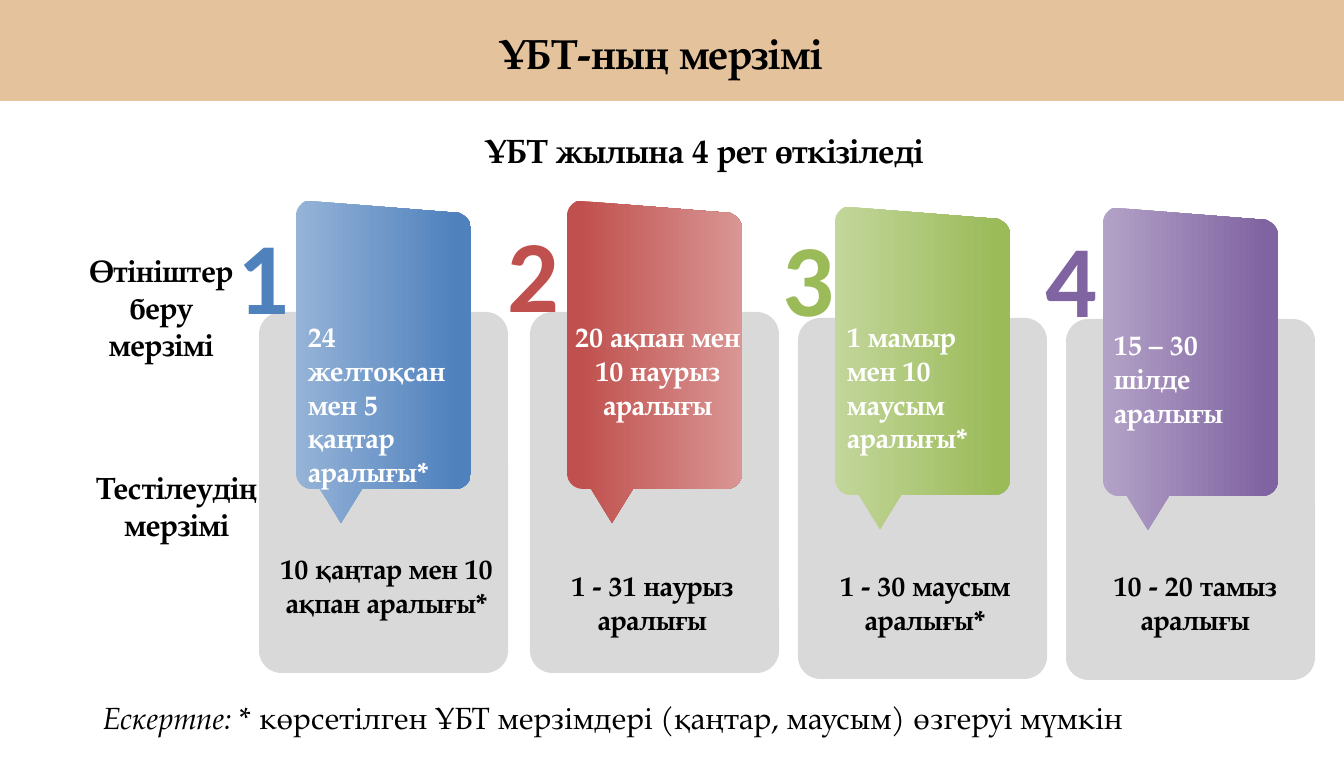
from pptx import Presentation
from pptx.dml.color import RGBColor
from pptx.enum.shapes import MSO_SHAPE
from pptx.enum.text import MSO_ANCHOR, MSO_AUTO_SIZE, PP_ALIGN
from pptx.util import Emu, Pt

SCALE = 914400 / 100.7
SERIF = "TeX Gyre Pagella"
SANS = "Calibri"
BLACK, WHITE, CARD_GREY, SAND = "000000", "FFFFFF", "D9D9D9", "E4C29C"
LEFT, CENTER, JUSTIFY = PP_ALIGN.LEFT, PP_ALIGN.CENTER, PP_ALIGN.JUSTIFY
TOP = MSO_ANCHOR.TOP
FIT_SHAPE = MSO_AUTO_SIZE.SHAPE_TO_FIT_TEXT
FIXED_SIZE = MSO_AUTO_SIZE.NONE
RECT, ROUND_RECT = MSO_SHAPE.RECTANGLE, MSO_SHAPE.ROUNDED_RECTANGLE
TITLE_ONLY = 5

CARD_W, CARD_H = 249, 361
CALLOUT_DX, CALLOUT_DY = 37, -111

PERIODS = [
    dict(card=(259, 312), number=("1", 228, 207),
         stops=[(0, "95B3D7"), (0.93, "4F81BD")], accent="4F81BD",
         apply=("24 желтоқсан мен 5 қаңтар аралығы*", (298, 315, 175, 179), LEFT),
         test=("10 қаңтар мен 10 ақпан аралығы*", (265, 547, 243, 112))),
    dict(card=(530, 312), number=("2", 498, 205),
         stops=[(0.07, "C0504D"), (1, "D99694")], accent="C0504D",
         apply=("20 ақпан мен 10 наурыз аралығы", (560, 315, 195, 146), CENTER),
         test=("1 - 31 наурыз аралығы", (532, 564, 240, 79))),
    dict(card=(798, 318), number=("3", 773, 209),
         stops=[(0, "C3D69B"), (0.93, "9BBB59")], accent="9BBB59",
         apply=("1 мамыр мен 10 маусым аралығы*", (837, 315, 175, 146), LEFT),
         test=("1 - 30 маусым аралығы*", (806, 564, 238, 79))),
    dict(card=(1066, 319), number=("4", 1036, 210),
         stops=[(0, "B3A2C7"), (0.93, "8064A2")], accent="8064A2",
         apply=("15 – 30 шілде аралығы", (1104, 323, 175, 112), LEFT),
         test=("10 - 20 тамыз аралығы", (1066, 564, 258, 79))),
]


def px(length):
    """Turn pixels into EMU."""
    return Emu(round(length * SCALE))


def color(hex_value):
    """Turn a hex string into a colour."""
    return RGBColor.from_string(hex_value)


def add_run(paragraph, text, size, font=SERIF, ink=BLACK, bold=False, italic=False):
    """Append one formatted run."""
    run = paragraph.add_run()
    run.text = text
    run.font.size = Pt(size)
    run.font.name = font
    run.font.bold = bold
    run.font.italic = italic
    run.font.color.rgb = color(ink)


def add_text(slide, text, box, size, align=CENTER, wrap=True, **run_format):
    """Add a text box and return its paragraph."""
    frame = slide.shapes.add_textbox(*map(px, box)).text_frame
    frame.word_wrap = wrap
    frame.auto_size = FIT_SHAPE
    paragraph = frame.paragraphs[0]
    paragraph.alignment = align
    add_run(paragraph, text, size, **run_format)
    return paragraph


def add_panel(slide, kind, box, fill):
    """Add a plain filled shape without outline."""
    panel = slide.shapes.add_shape(kind, *map(px, box))
    panel.shadow.inherit = False
    panel.fill.solid()
    panel.fill.fore_color.rgb = color(fill)
    panel.line.fill.background()
    return panel


def corner(p0, p1, p2, p3, steps=8):
    """Sample points along a cubic curve."""
    points = []
    for step in range(steps + 1):
        t = step / steps
        weights = ((1 - t) ** 3, 3 * t * (1 - t) ** 2, 3 * t * t * (1 - t), t ** 3)
        points.append(tuple(sum(w * p[axis] for w, p in zip(weights, (p0, p1, p2, p3)))
                            for axis in (0, 1)))
    return points


def add_callout(slide, left, top, stops):
    """Draw a slanted speech callout with a horizontal gradient."""
    outline = [(13, 0), (163, 12)]
    outline += corner((165, 13), (171, 16), (175, 21), (175, 28))
    outline += corner((175, 272), (175, 281), (168, 288), (159, 288))
    outline += [(66, 288), (45, 322), (24, 288)]
    outline += corner((16, 288), (7, 288), (0, 281), (0, 272))
    outline += corner((0, 15), (0, 8), (4, 3), (10, 0))
    points = [(px(x), px(y)) for x, y in outline]
    builder = slide.shapes.build_freeform(*points[0])
    builder.add_line_segments(points[1:], close=True)
    callout = builder.convert_to_shape(px(left), px(top))
    callout.shadow.inherit = False
    callout.line.fill.background()
    callout.fill.gradient()
    callout.fill.gradient_angle = 0
    for stop, (position, shade) in zip(callout.fill.gradient_stops, stops):
        stop.position = position
        stop.color.rgb = color(shade)


def add_period(slide, card, number, stops, accent, apply, test):
    """Draw one testing period: card, callout, number and dates."""
    left, top = card
    panel = add_panel(slide, ROUND_RECT, (left, top, CARD_W, CARD_H), CARD_GREY)
    panel.adjustments[0] = 0.09
    add_callout(slide, left + CALLOUT_DX, top + CALLOUT_DY, stops)
    apply_dates, apply_box, apply_align = apply
    add_text(slide, apply_dates, apply_box, 20, apply_align, ink=WHITE, bold=True)
    test_dates, test_box = test
    add_text(slide, test_dates, test_box, 20, bold=True)
    digit, digit_left, digit_top = number
    add_text(slide, digit, (digit_left, digit_top, 61, 159), 73, LEFT, wrap=False,
             font=SANS, ink=accent, bold=True)


def add_header(slide, box):
    """Draw the banner and set the title on it."""
    left, top, _, _ = box
    banner = add_panel(slide, RECT, box, SAND)
    title = slide.shapes.title
    title.left, title.top = px(left + 491), px(top + 25)
    title.width, title.height = px(382), px(61)
    banner.element.addnext(title.element)
    frame = title.text_frame
    frame.auto_size = FIXED_SIZE
    frame.vertical_anchor = TOP
    frame.word_wrap = True
    heading = frame.paragraphs[0]
    heading.alignment = LEFT
    add_run(heading, "ҰБТ-ның мерзімі", 30, bold=True)


def main():
    """Build the slide and save it."""
    deck = Presentation()
    deck.slide_width, deck.slide_height = px(1344), px(773)
    slide = deck.slides.add_slide(deck.slide_layouts[TITLE_ONLY])
    for period in PERIODS:
        add_period(slide, **period)
    add_text(slide, "Өтініштер беру мерзімі", (68, 247, 186, 122), 22, bold=True)
    add_text(slide, "Тестілеудің мерзімі", (68, 464, 217, 85), 22, bold=True)
    add_header(slide, (-2, -2, 1348, 103))
    add_text(slide, "ҰБТ жылына 4 рет өткізіледі", (446, 125, 516, 50), 24,
             wrap=False, bold=True)
    note = add_text(slide, "Ескертпе: * ", (93, 694, 1251, 47), 22, JUSTIFY, italic=True)
    add_run(note, "көрсетілген ҰБТ мерзімдері (қаңтар, маусым) өзгеруі мүмкін", 22)
    deck.save("out.pptx")


if __name__ == "__main__":
    main()
